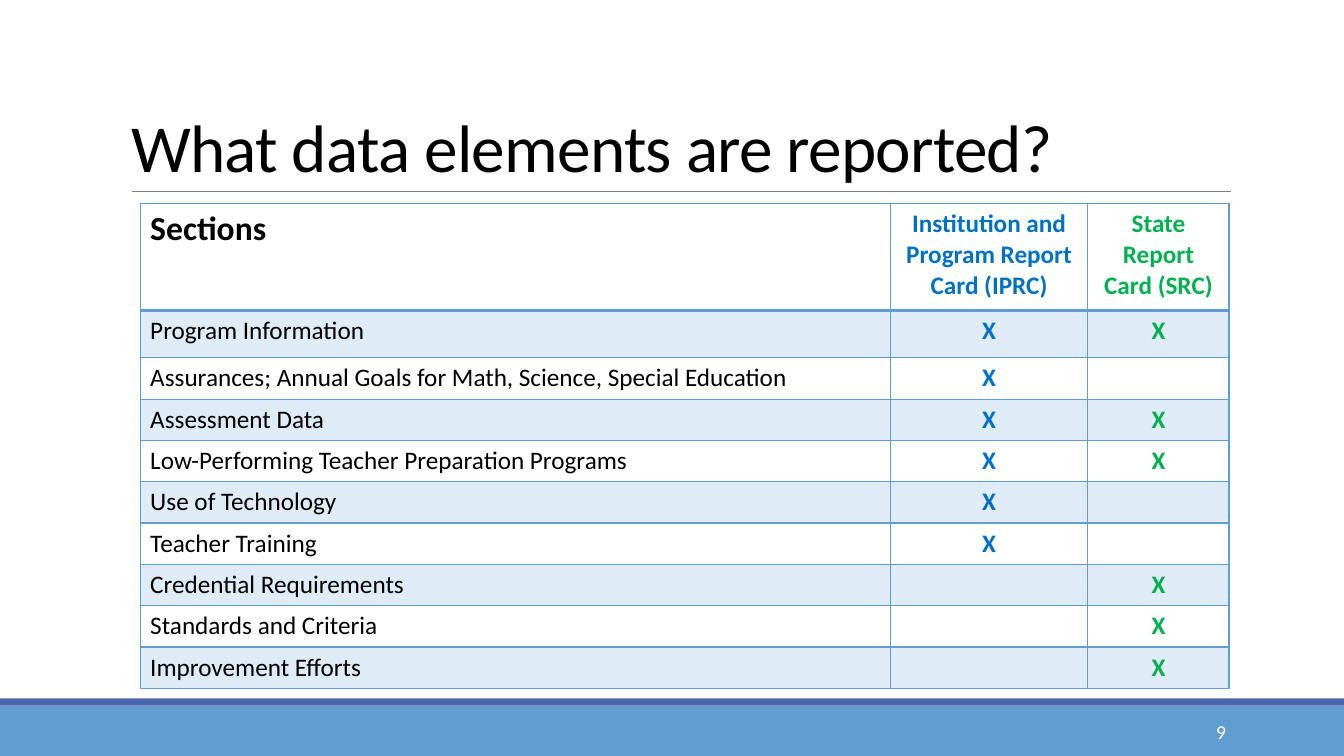
from lxml import etree
from pptx import Presentation
from pptx import util as u
from pptx.dml.color import RGBColor
from pptx.enum import shapes, text
from pptx.oxml.ns import qn

COLORS = {"sky": "629DD1", "navy": "4A66AC", "rule": "808080", "text": "000000",
          "iprc": "0070C0", "src": "00B050", "white": "FFFFFF"}
FONT = "Calibri"
HEADERS = ["Sections", "Institution and Program Report Card (IPRC)",
           "State Report Card (SRC)"]
# Section, reported in IPRC, reported in SRC
SECTIONS = [
    ("Program Information", "X", "X"),
    ("Assurances; Annual Goals for Math, Science, Special Education", "X", ""),
    ("Assessment Data", "X", "X"),
    ("Low-Performing Teacher Preparation Programs", "X", "X"),
    ("Use of Technology", "X", ""),
    ("Teacher Training", "X", ""),
    ("Credential Requirements", "", "X"),
    ("Standards and Criteria", "", "X"),
    ("Improvement Efforts", "", "X"),
]
COL_WIDTHS = [7.44, 1.96, 1.4]
COL_COLORS = ["text", "iprc", "src"]
ROW_HEIGHTS = [1.06, 0.47] + [0.41] * 8


def rgb(name):
    return RGBColor.from_string(COLORS[name])


def style(p, size, color, bold=False, align=text.PP_ALIGN.LEFT):
    p.alignment = align
    for r in p.runs:
        f = r.font
        f.name, f.size, f.bold = FONT, u.Pt(size), bold
        f.color.rgb = rgb(color)


def add_band(s, left, top, width, height, color):
    sp = s.shapes.add_shape(shapes.MSO_SHAPE.RECTANGLE, u.Inches(left), u.Inches(top),
                            u.Inches(width), u.Inches(height))
    sp.shadow.inherit = False
    sp.fill.solid()
    sp.fill.fore_color.rgb = rgb(color)
    sp.line.fill.background()


def add_footer(s, left, top, width, height, number):
    stripe = 0.07
    add_band(s, left, top + stripe, width, height - stripe, "sky")
    add_band(s, left, top, width, stripe, "navy")
    # Slide number
    sp = s.shapes.add_textbox(u.Inches(left + 10.83), u.Inches(top + 0.13),
                              u.Inches(1.43), u.Inches(0.4))
    tf = sp.text_frame
    tf.word_wrap = True
    tf.vertical_anchor = text.MSO_ANCHOR.MIDDLE
    tf.text = number
    style(tf.paragraphs[0], 14, "white", align=text.PP_ALIGN.RIGHT)


def add_title(s, left, top, width, height, title):
    sp = s.shapes.title
    sp.left, sp.top = u.Inches(left), u.Inches(top)
    sp.width, sp.height = u.Inches(width), u.Inches(height)
    tf = sp.text_frame
    tf.text = title
    tf.word_wrap = True
    tf.auto_size = text.MSO_AUTO_SIZE.NONE
    tf.vertical_anchor = text.MSO_ANCHOR.BOTTOM
    p = tf.paragraphs[0]
    p.line_spacing = 0.85
    style(p, 48, "text")
    p.runs[0].font._element.set("spc", "-50")
    # Rule under the title
    y = u.Inches(top + height)
    line = s.shapes.add_connector(shapes.MSO_CONNECTOR.STRAIGHT, u.Inches(left + 0.11), y,
                                  u.Inches(left + width + 0.01), y)
    line.line.color.rgb = rgb("rule")
    line.line.width = u.Pt(0.5)
    etree.SubElement(line._element.spPr, qn("a:effectLst"))


def format_cell(cell, widths, shaded):
    tc_pr = cell._tc.get_or_add_tcPr()
    for side, width in zip("LRTB", widths):
        ln = etree.SubElement(tc_pr, qn("a:ln" + side), w=str(u.Pt(width)))
        fill = etree.SubElement(ln, qn("a:solidFill"))
        etree.SubElement(fill, qn("a:srgbClr"), val=COLORS["sky"])
    if shaded:
        cell.fill.solid()
        cell.fill.fore_color.rgb = rgb("sky")
        color = tc_pr.find(qn("a:solidFill")).find(qn("a:srgbClr"))
        etree.SubElement(color, qn("a:alpha"), val="20000")
    else:
        cell.fill.background()


def add_sections_table(s, left, top):
    rows = [HEADERS] + SECTIONS
    table = s.shapes.add_table(len(rows), len(HEADERS), u.Inches(left), u.Inches(top),
                               u.Inches(sum(COL_WIDTHS)), u.Inches(sum(ROW_HEIGHTS))).table
    table.first_row = table.horz_banding = False
    for col, width in zip(table.columns, COL_WIDTHS):
        col.width = u.Inches(width)
    for i, values in enumerate(rows):
        table.rows[i].height = u.Inches(ROW_HEIGHTS[i])
        # The line under the header is heavier
        widths = (1, 1, 2 if i == 1 else 1, 2 if i == 0 else 1)
        for j, value in enumerate(values):
            cell = table.cell(i, j)
            format_cell(cell, widths, shaded=i % 2 == 1)
            if value:
                cell.text = value
                style(cell.text_frame.paragraphs[0], 24 if i == j == 0 else 18,
                      COL_COLORS[j], bold=i == 0 or j > 0,
                      align=text.PP_ALIGN.CENTER if j else text.PP_ALIGN.LEFT)


def main():
    prs = Presentation()
    prs.slide_width, prs.slide_height = u.Inches(13.33), u.Inches(7.5)
    s = prs.slides.add_slide(prs.slide_layouts[5])
    add_footer(s, 0, 6.93, 13.33, 0.57, "9")
    add_title(s, 1.2, 0.31, 11, 1.59, "What data elements are reported?")
    add_sections_table(s, 1.39, 2.02)
    prs.save("out.pptx")


if __name__ == "__main__":
    main()
